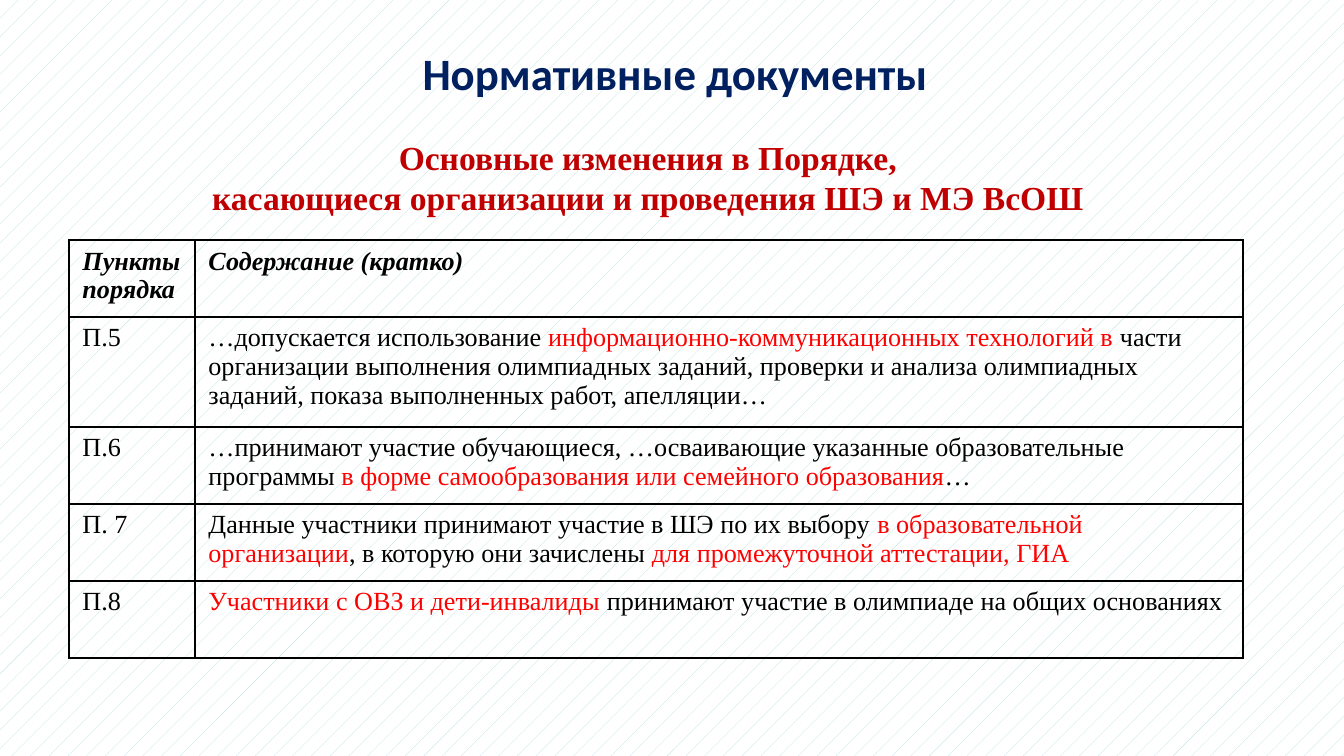
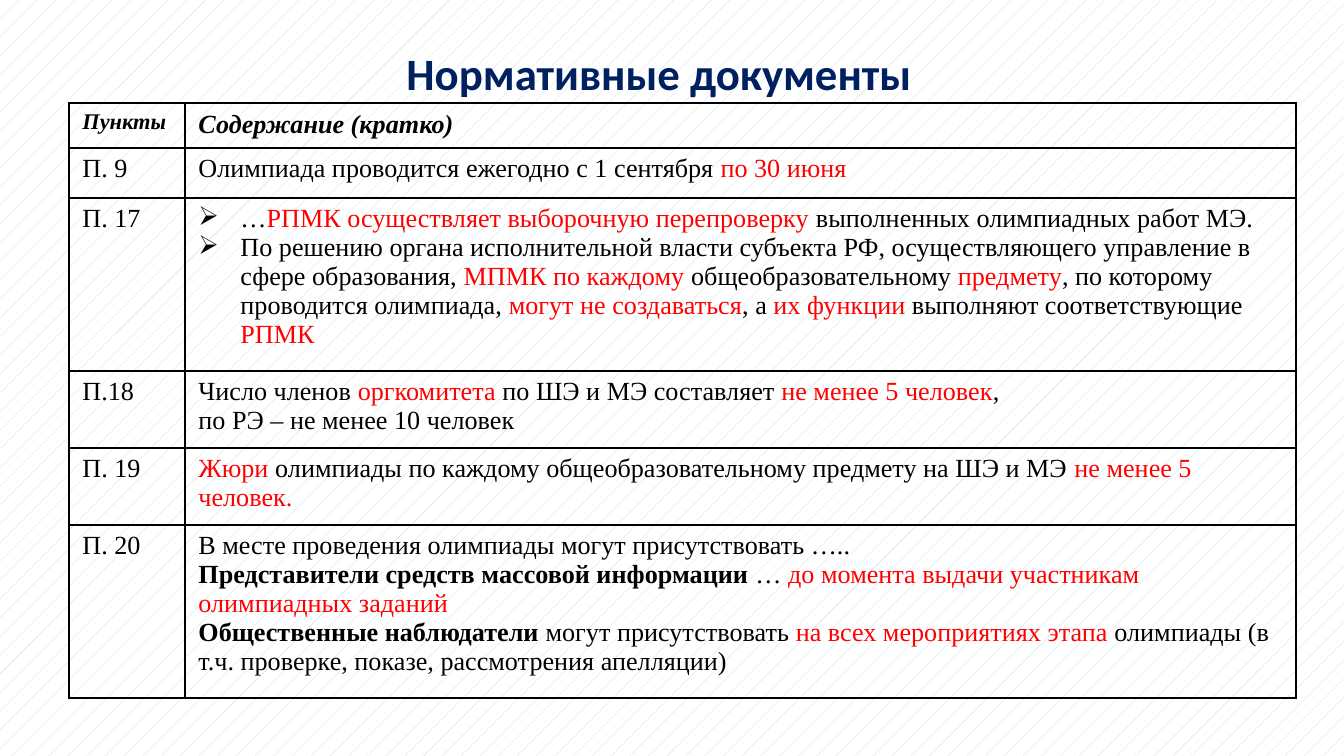
from dataclasses import dataclass

from lxml import etree
from pptx import Presentation
from pptx.dml.color import RGBColor
from pptx.enum.dml import MSO_PATTERN
from pptx.enum.text import MSO_ANCHOR, PP_ALIGN
from pptx.oxml.ns import qn
from pptx.util import Pt

EMU_PER_PX = 914400 / 134.4
SLIDE_WIDTH, SLIDE_HEIGHT = 1344, 756
TITLE_ONLY = 5
CENTER, LEFT = PP_ALIGN.CENTER, PP_ALIGN.LEFT
MIDDLE, TOP = MSO_ANCHOR.MIDDLE, MSO_ANCHOR.TOP
DOTTED = MSO_PATTERN.PERCENT_5
BULLET = "➢"
BULLET_INDENT = 42


def px(length):
    return round(length * EMU_PER_PX)


@dataclass(frozen=True)
class Style:
    size: int
    color: str
    font: str = "Times New Roman"
    bold: bool = False
    italic: bool = False


class Theme:
    """Colours and type sizes."""
    paper, pattern, border = "FFFFFF", "BBE0E3", "000000"
    border_width = 1
    title = Style(24, "002060", "Calibri", bold=True)
    subtitle = Style(18, "C00000", bold=True)
    header = Style(14, "000000", bold=True, italic=True)
    small_header = Style(12, "000000", bold=True, italic=True)
    body = Style(14, "000000")
    strong = Style(14, "000000", bold=True)
    accent = Style(14, "FF0000")


def header(text):
    return [[(text, Theme.header)]]


def small_header(text):
    return [[(text, Theme.small_header)]]


def red(text):
    return text, Theme.accent


def bold(text):
    return text, Theme.strong


class Deck:
    """Holds the presentation, its theme and the current slide."""

    def __init__(self, theme):
        self.theme = theme
        self.presentation = Presentation()
        self.presentation.slide_width = px(SLIDE_WIDTH)
        self.presentation.slide_height = px(SLIDE_HEIGHT)
        self.slide = None

    def add_slide(self, title, title_width):
        layout = self.presentation.slide_layouts[TITLE_ONLY]
        self.slide = self.presentation.slides.add_slide(layout)
        fill = self.slide.background.fill
        fill.patterned()
        fill.pattern = DOTTED
        fill.fore_color.rgb = RGBColor.from_string(self.theme.pattern)
        fill.back_color.rgb = RGBColor.from_string(self.theme.paper)
        shape = self.slide.shapes.title
        shape.left, shape.top = px(249), px(39)
        shape.width, shape.height = px(title_width), px(67)
        shape.text_frame.vertical_anchor = MIDDLE
        self.add_paragraphs(shape.text_frame, [[title]], self.theme.title, CENTER)

    def add_text(self, left, top, width, height, paragraphs, style):
        shape = self.slide.shapes.add_textbox(px(left), px(top), px(width), px(height))
        shape.text_frame.word_wrap = True
        shape.text_frame.vertical_anchor = TOP
        self.add_paragraphs(shape.text_frame, paragraphs, style, CENTER)

    def add_table(self, left, top, columns, heights, rows):
        table = self.slide.shapes.add_table(
            len(heights), len(columns), px(left), px(top),
            px(sum(columns)), px(sum(heights))).table
        table.first_row = table.horz_banding = False
        for column, width in zip(table.columns, columns):
            column.width = px(width)
        for table_row, height, contents in zip(table.rows, heights, rows):
            table_row.height = px(height)
            for cell, paragraphs in zip(table_row.cells, contents):
                cell.fill.background()
                self.add_borders(cell)
                self.add_paragraphs(cell.text_frame, paragraphs, self.theme.body, LEFT)

    def add_borders(self, cell):
        properties = cell._tc.get_or_add_tcPr()
        for index, side in enumerate(("lnL", "lnR", "lnT", "lnB")):
            line = etree.Element(qn(f"a:{side}"), w=str(Pt(self.theme.border_width)))
            fill = etree.SubElement(line, qn("a:solidFill"))
            etree.SubElement(fill, qn("a:srgbClr"), val=self.theme.border)
            properties.insert(index, line)

    def add_bullet(self, paragraph):
        properties = paragraph._p.get_or_add_pPr()
        properties.set("marL", str(px(BULLET_INDENT)))
        properties.set("indent", str(-px(BULLET_INDENT)))
        etree.SubElement(properties, qn("a:buChar"), char=BULLET)

    def add_paragraphs(self, frame, paragraphs, style, alignment):
        """Each paragraph is a list of runs; a leading BULLET makes it a list item."""
        for index, runs in enumerate(paragraphs):
            paragraph = frame.add_paragraph() if index else frame.paragraphs[0]
            paragraph.alignment = alignment
            if runs[0] == BULLET:
                self.add_bullet(paragraph)
                runs = runs[1:]
            for item in runs:
                text, run_style = (item, style) if isinstance(item, str) else item
                run = paragraph.add_run()
                run.text = text
                run.font.name = run_style.font
                run.font.size = Pt(run_style.size)
                run.font.bold = run_style.bold
                run.font.italic = run_style.italic
                run.font.color.rgb = RGBColor.from_string(run_style.color)


TITLE = "Нормативные документы"
CONTENT_HEADER = header("Содержание (кратко)")
TABLE_LEFT = 69

MAIN_CHANGES = [
    (header("Пункты порядка"), CONTENT_HEADER),
    ([["П.5"]], [[
        "…допускается использование ",
        red("информационно-коммуникационных технологий в "),
        "части организации выполнения олимпиадных заданий, проверки и анализа "
        "олимпиадных заданий, показа выполненных работ, апелляции…"]]),
    ([["П.6"]], [[
        "…принимают участие обучающиеся, …осваивающие указанные образовательные программы ",
        red("в форме самообразования или семейного образования"), "…"]]),
    ([["П. 7"]], [[
        "Данные участники принимают участие в ШЭ по их выбору ",
        red("в образовательной организации"), ", в которую они зачислены ",
        red("для промежуточной аттестации, ГИА")]]),
    ([["П.8"]], [[
        red("Участники с ОВЗ и дети-инвалиды "),
        "принимают участие в олимпиаде на общих основаниях"]]),
]

FURTHER_CHANGES = [
    (small_header("Пункты"), CONTENT_HEADER),
    ([["П. 9"]], [["Олимпиада проводится ежегодно с 1 сентября ", red("по 30 июня")]]),
    ([["П. 17"]], [
        [BULLET, "…", red("РПМК осуществляет выборочную перепроверку "),
         "выполненных олимпиадных работ МЭ."],
        [BULLET, "По решению органа исполнительной власти субъекта РФ, "
         "осуществляющего управление в сфере образования, ",
         red("МПМК по каждому "), "общеобразовательному ", red("предмету"),
         ", по которому проводится олимпиада, ", red("могут не создаваться"),
         ", а ", red("их функции "), "выполняют соответствующие ", red("РПМК")]]),
    ([["П.18"]], [
        ["Число членов ", red("оргкомитета"), " по ШЭ и МЭ составляет ",
         red("не менее 5 человек"), ","],
        ["по РЭ – не менее 10 человек"]]),
    ([["П. 19"]], [[
        red("Жюри"), " олимпиады по каждому общеобразовательному предмету на ШЭ и МЭ ",
        red("не менее 5 человек.")]]),
    ([["П. 20"]], [
        ["В месте проведения олимпиады могут присутствовать ….."],
        [bold("Представители средств массовой информации "), "… ",
         red("до момента выдачи участникам олимпиадных заданий")],
        [bold("Общественные наблюдатели "), "могут присутствовать ",
         red("на всех мероприятиях этапа "),
         "олимпиады (в т.ч. проверке, показе, рассмотрения апелляции)"]]),
]


def main():
    deck = Deck(Theme)

    # Main changes with a subtitle
    deck.add_slide(TITLE, 852)
    deck.add_text(5, 130, 1286, 92, [
        ["Основные изменения в Порядке,"],
        ["касающиеся организации и проведения ШЭ и МЭ ВсОШ"]], Theme.subtitle)
    deck.add_table(TABLE_LEFT, 240, (126, 1048), (77, 110, 77, 77, 77), MAIN_CHANGES)

    # Further changes
    deck.add_slide(TITLE, 820)
    deck.add_table(TABLE_LEFT, 103, (116, 1111), (45, 50, 173, 77, 77, 173), FURTHER_CHANGES)

    deck.presentation.save("out.pptx")


if __name__ == "__main__":
    main()
